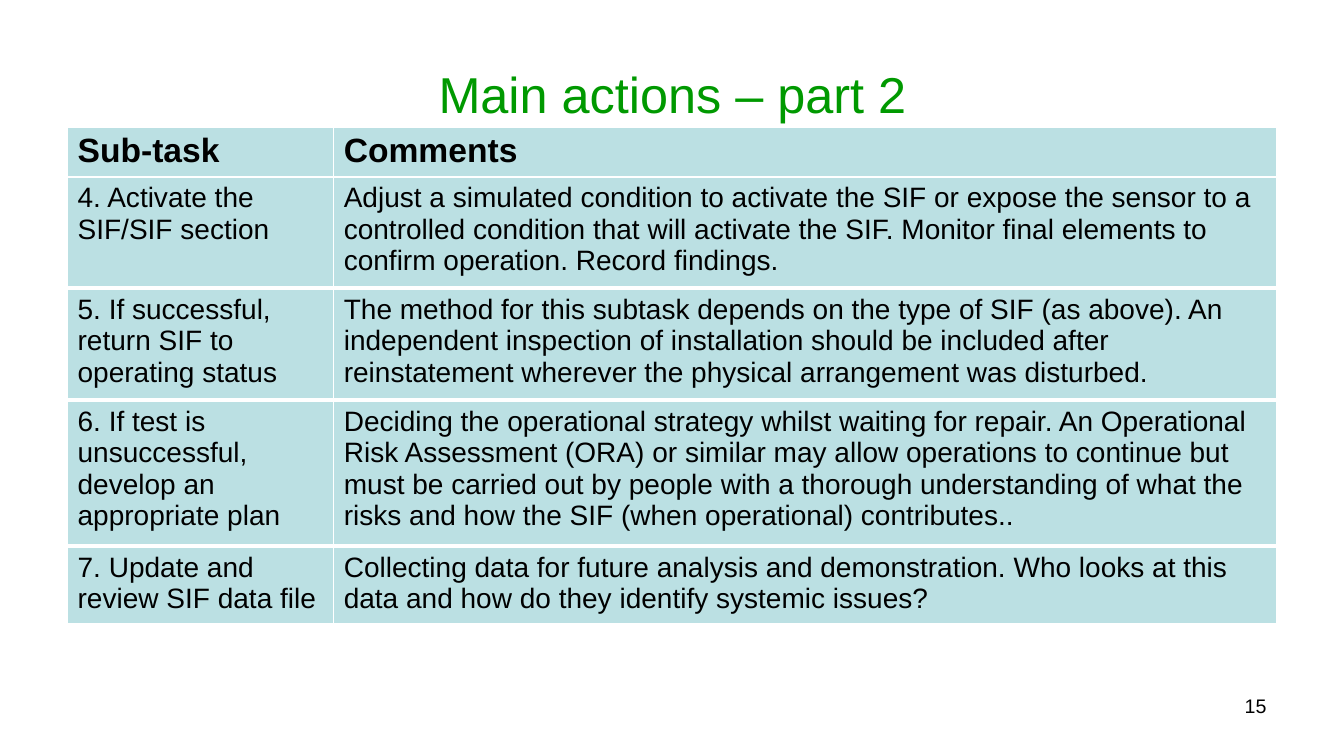
from dataclasses import dataclass

import pptx
import pptx.dml.color
import pptx.enum.text
import pptx.oxml
import pptx.oxml.ns
import pptx.slide
import pptx.table
import pptx.text.text
import pptx.util

Inches = pptx.util.Inches
PP_ALIGN = pptx.enum.text.PP_ALIGN
MSO_ANCHOR = pptx.enum.text.MSO_ANCHOR


@dataclass(frozen=True)
class Theme:
    font: str = "Arial"
    title_color: str = "009900"
    text_color: str = "000000"
    cell_color: str = "BBE0E3"
    border_color: str = "FFFFFF"
    title_size: int = 36
    heading_size: int = 24
    body_size: int = 20
    number_size: int = 14


@dataclass(frozen=True)
class Action:
    subtask: str
    comment: str
    top: float
    height: float
    heading: bool = False


THEME = Theme()
TABLE_LEFT = 0.67
COLUMN_WIDTHS = (2.64, 9.35)
ROW_HEIGHT = 0.41
BORDER_POINTS = {"a:lnL": 1, "a:lnR": 1, "a:lnT": 1, "a:lnB": 3}

ACTIONS = (
    Action("Sub-task", "Comments", 1.26, 0.5, heading=True),
    Action(
        "4. Activate the SIF/SIF section",
        "Adjust a simulated condition to activate the SIF or expose the sensor to a "
        "controlled condition that will activate the SIF. Monitor final elements to "
        "confirm operation. Record findings.",
        1.76, 1.1,
    ),
    Action(
        "5. If successful, return SIF to operating status",
        "The method for this subtask depends on the type of SIF (as above). An "
        "independent inspection of installation should be included after "
        "reinstatement wherever the physical arrangement was disturbed.",
        2.87, 1.1,
    ),
    Action(
        "6. If test is unsuccessful, develop an appropriate plan",
        "Deciding the operational strategy whilst waiting for repair. An Operational "
        "Risk Assessment (ORA) or similar may allow operations to continue but "
        "must be carried out by people with a thorough understanding of what the "
        "risks and how the SIF (when operational) contributes..",
        3.98, 1.43,
    ),
    Action(
        "7. Update and review SIF data file",
        "Collecting data for future analysis and demonstration. Who looks at this "
        "data and how do they identify systemic issues?",
        5.43, 0.77,
    ),
)


def write_text(frame: pptx.text.text.TextFrame, text: str, size: int,
               color: str, bold: bool = False) -> None:
    frame.text = text
    font = frame.paragraphs[0].runs[0].font
    font.name = THEME.font
    font.size = pptx.util.Pt(size)
    font.bold = bold
    font.color.rgb = pptx.dml.color.RGBColor.from_string(color)


def add_label(page: pptx.slide.Slide, text: str,
              area: tuple[float, float, float, float], size: int, color: str,
              align: PP_ALIGN, anchor: MSO_ANCHOR) -> None:
    box = page.shapes.add_textbox(*(Inches(length) for length in area))
    frame = box.text_frame
    frame.word_wrap = True
    frame.vertical_anchor = anchor
    write_text(frame, text, size, color)
    frame.paragraphs[0].alignment = align


def add_borders(cell: pptx.table._Cell) -> None:
    """Outline the cell; the lines must precede its fill in the XML."""
    properties = cell._tc.get_or_add_tcPr()
    for position, (tag, points) in enumerate(BORDER_POINTS.items()):
        line = pptx.oxml.parse_xml(
            f'<{tag} {pptx.oxml.ns.nsdecls("a")} w="{pptx.util.Pt(points)}">'
            f'<a:solidFill><a:srgbClr val="{THEME.border_color}"/></a:solidFill>'
            f'</{tag}>'
        )
        properties.insert(position, line)


def add_action(page: pptx.slide.Slide, action: Action) -> None:
    """Draw one action as a single-row table."""
    graphic = page.shapes.add_table(
        1, len(COLUMN_WIDTHS), Inches(TABLE_LEFT), Inches(action.top),
        Inches(sum(COLUMN_WIDTHS)), Inches(ROW_HEIGHT),
    )
    table = graphic.table
    table.first_row = False
    table.horz_banding = False
    size = THEME.heading_size if action.heading else THEME.body_size
    for index, text in enumerate((action.subtask, action.comment)):
        table.columns[index].width = Inches(COLUMN_WIDTHS[index])
        cell = table.cell(0, index)
        cell.fill.solid()
        cell.fill.fore_color.rgb = pptx.dml.color.RGBColor.from_string(THEME.cell_color)
        add_borders(cell)
        write_text(cell.text_frame, text, size, THEME.text_color, action.heading)
    graphic.height = Inches(action.height)


def main() -> None:
    deck = pptx.Presentation()
    deck.slide_width = Inches(13.33)
    deck.slide_height = Inches(7.5)
    page = deck.slides.add_slide(deck.slide_layouts[6])
    add_label(page, "Main actions – part 2", (0.67, 0.3, 12, 1.25),
              THEME.title_size, THEME.title_color, PP_ALIGN.CENTER, MSO_ANCHOR.MIDDLE)
    add_label(page, "15", (9.55, 6.83, 3.11, 0.52),
              THEME.number_size, THEME.text_color, PP_ALIGN.RIGHT, MSO_ANCHOR.TOP)
    for action in ACTIONS:
        add_action(page, action)
    deck.save("out.pptx")


if __name__ == "__main__":
    main()
